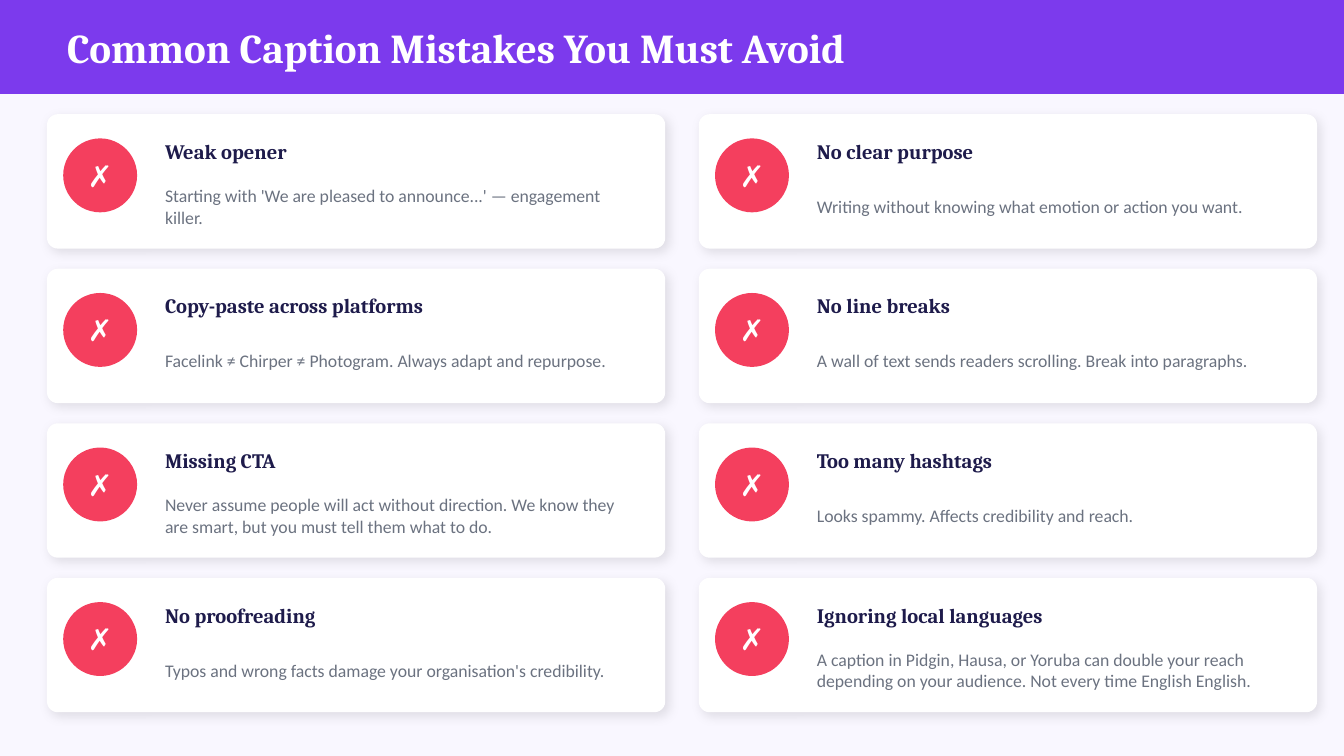
from dataclasses import dataclass

from lxml.etree import SubElement
from pptx import Presentation
from pptx.dml.color import RGBColor
from pptx.enum.shapes import MSO_SHAPE
from pptx.enum.text import MSO_ANCHOR, MSO_AUTO_SIZE, PP_ALIGN
from pptx.oxml.ns import qn
from pptx.shapes.autoshape import Shape
from pptx.slide import Slide
from pptx.util import Inches, Pt

PURPLE = "7C3AED"
LAVENDER = "F9F7FF"
WHITE = "FFFFFF"
ROSE = "F43F5E"
NAVY = "1E1B4B"
GRAY = "6B7280"

HEADING_FONT = "Cambria"
BODY_FONT = "Calibri"

SLIDE_WIDTH = 10
SLIDE_HEIGHT = SLIDE_WIDTH * 9 / 16
COLUMNS = 2
CARD_WIDTH, CARD_HEIGHT = 4.6, 1
GRID_LEFT, GRID_TOP = 0.35, 0.85
COLUMN_STEP, ROW_STEP = 4.85, 1.15


@dataclass(frozen=True)
class Box:
    left: float
    top: float
    width: float
    height: float

    def lengths(self) -> tuple:
        return tuple(Inches(value) for value in (self.left, self.top, self.width, self.height))


@dataclass(frozen=True)
class Mistake:
    heading: str
    advice: str


MISTAKES = [
    Mistake("Weak opener", "Starting with 'We are pleased to announce...' — engagement killer."),
    Mistake("No clear purpose", "Writing without knowing what emotion or action you want."),
    Mistake("Copy-paste across platforms", "Facelink ≠ Chirper ≠ Photogram. Always adapt and repurpose."),
    Mistake("No line breaks", "A wall of text sends readers scrolling. Break into paragraphs."),
    Mistake(
        "Missing CTA",
        "Never assume people will act without direction. "
        "We know they are smart, but you must tell them what to do.",
    ),
    Mistake("Too many hashtags", "Looks spammy. Affects credibility and reach."),
    Mistake("No proofreading", "Typos and wrong facts damage your organisation's credibility."),
    Mistake(
        "Ignoring local languages",
        "A caption in Pidgin, Hausa, or Yoruba can double your reach "
        "depending on your audience. Not every time English English.",
    ),
]


def color(value: str) -> RGBColor:
    return RGBColor.from_string(value)


def write_text(shape: Shape, text: str, *, size: float, font: str, fill: str,
               bold: bool = False, align: PP_ALIGN = PP_ALIGN.LEFT,
               inset: float | None = None) -> None:
    frame = shape.text_frame
    frame.word_wrap = True
    frame.auto_size = MSO_AUTO_SIZE.NONE
    frame.vertical_anchor = MSO_ANCHOR.MIDDLE
    if inset is not None:
        frame.margin_left = frame.margin_right = Inches(inset)
        frame.margin_top = frame.margin_bottom = Inches(inset)
    paragraph = frame.paragraphs[0]
    paragraph.alignment = align
    run = paragraph.add_run()
    run.text = text
    run.font.size = Pt(size)
    run.font.name = font
    run.font.bold = bold
    run.font.color.rgb = color(fill)


def add_filled_shape(slide: Slide, kind: MSO_SHAPE, box: Box, fill: str) -> Shape:
    shape = slide.shapes.add_shape(kind, *box.lengths())
    shape.shadow.inherit = False
    shape.fill.solid()
    shape.fill.fore_color.rgb = color(fill)
    shape.line.fill.background()
    return shape


def add_text(slide: Slide, box: Box, text: str, **text_format) -> None:
    write_text(slide.shapes.add_textbox(*box.lengths()), text, **text_format)


def add_soft_shadow(shape: Shape) -> None:
    effects = shape.element.spPr.find(qn("a:effectLst"))
    shadow = SubElement(effects, qn("a:outerShdw"), blurRad=str(Pt(6)), dist=str(Pt(2)),
                        dir=str(45 * 60000), algn="bl", rotWithShape="0")
    shadow_color = SubElement(shadow, qn("a:srgbClr"), val="000000")
    SubElement(shadow_color, qn("a:alpha"), val="10000")


def add_header(slide: Slide, text: str) -> None:
    band = add_filled_shape(slide, MSO_SHAPE.RECTANGLE, Box(0, 0, SLIDE_WIDTH, 0.7), PURPLE)
    title = slide.shapes.title
    title.left, title.top, title.width, title.height = Box(0.4, 0, 9.2, 0.7).lengths()
    write_text(title, text, size=22, font=HEADING_FONT, fill=WHITE, bold=True)
    title.element.addprevious(band.element)


def add_card(slide: Slide, left: float, top: float, mistake: Mistake) -> None:
    card_box = Box(left, top, CARD_WIDTH, CARD_HEIGHT)
    card = add_filled_shape(slide, MSO_SHAPE.ROUNDED_RECTANGLE, card_box, WHITE)
    card.adjustments[0] = 0.08
    add_soft_shadow(card)

    badge_box = Box(left + 0.12, top + 0.18, 0.55, 0.55)
    add_filled_shape(slide, MSO_SHAPE.OVAL, badge_box, ROSE)
    add_text(slide, badge_box, "✗", size=16, font=BODY_FONT, fill=WHITE, bold=True,
             align=PP_ALIGN.CENTER, inset=0)

    text_left = left + 0.78
    add_text(slide, Box(text_left, top + 0.1, 3.7, 0.35), mistake.heading,
             size=11, font=HEADING_FONT, fill=NAVY, bold=True)
    add_text(slide, Box(text_left, top + 0.46, 3.7, 0.45), mistake.advice,
             size=9.5, font=BODY_FONT, fill=GRAY)


def main() -> None:
    presentation = Presentation()
    presentation.slide_width = Inches(SLIDE_WIDTH)
    presentation.slide_height = Inches(SLIDE_HEIGHT)
    slide = presentation.slides.add_slide(presentation.slide_layouts[5])
    slide.background.fill.solid()
    slide.background.fill.fore_color.rgb = color(LAVENDER)

    add_header(slide, "Common Caption Mistakes You Must Avoid")
    for index, mistake in enumerate(MISTAKES):
        row, column = divmod(index, COLUMNS)
        add_card(slide, GRID_LEFT + column * COLUMN_STEP, GRID_TOP + row * ROW_STEP, mistake)

    presentation.save("out.pptx")


if __name__ == "__main__":
    main()
